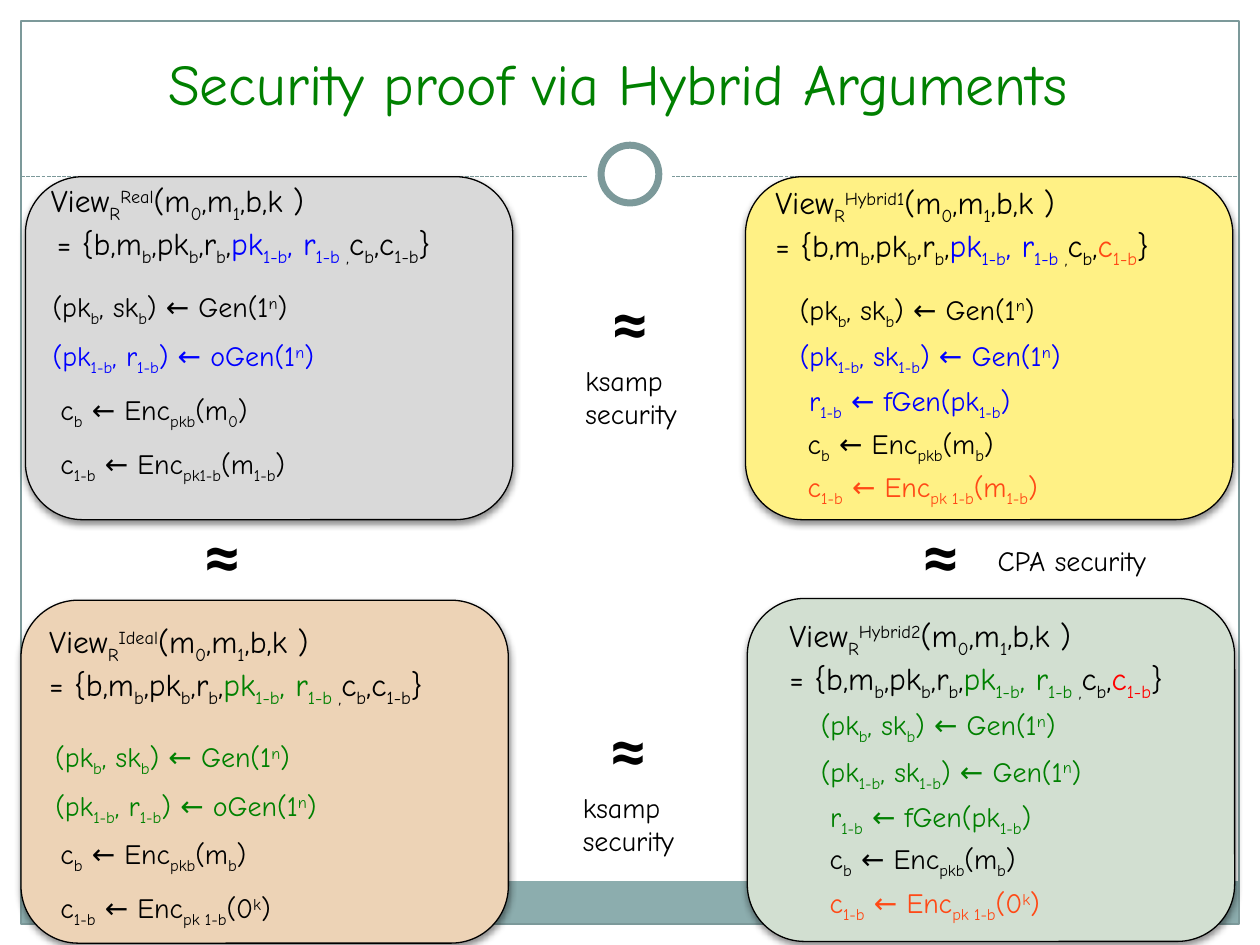
from lxml import etree
from pptx import Presentation
from pptx.dml.color import RGBColor
from pptx.enum.dml import MSO_LINE
from pptx.enum.shapes import MSO_CONNECTOR, MSO_SHAPE
from pptx.enum.text import MSO_ANCHOR, PP_ALIGN
from pptx.oxml import parse_xml
from pptx.oxml.ns import qn
from pptx.util import Pt

RECTANGLE, ROUNDED, OVAL = MSO_SHAPE.RECTANGLE, MSO_SHAPE.ROUNDED_RECTANGLE, MSO_SHAPE.OVAL
BLACK, WHITE, GREEN, BLUE = "000000", "FFFFFF", "008000", "0000FF"
ORANGE, RED, TEAL = "FF4916", "FF0000", "7C999A"
BASELINES = {"_": "-25000", "^": "30000"}
SHADOW = (
    '<a:effectLst xmlns:a="http://schemas.openxmlformats.org/drawingml/2006/main">'
    '<a:outerShdw blurRad="50800" dist="25400" dir="5400000" rotWithShape="0">'
    '<a:srgbClr val="000000"><a:alpha val="45000"/></a:srgbClr>'
    "</a:outerShdw></a:effectLst>"
)

presentation = Presentation()
presentation.slide_width, presentation.slide_height = Pt(720), Pt(540)
slide = presentation.slides.add_slide(presentation.slide_layouts[6])


def add_shape(kind, box, fill=None, line=None, line_width=0.75):
    shape = slide.shapes.add_shape(kind, *map(Pt, box))
    shape.shadow.inherit = False
    if fill:
        shape.fill.solid()
        shape.fill.fore_color.rgb = RGBColor.from_string(fill)
    else:
        shape.fill.background()
    if line:
        shape.line.color.rgb = RGBColor.from_string(line)
        shape.line.width = Pt(line_width)
    else:
        shape.line.fill.background()
    return shape


def add_text(box, lines, size=16, font="Comic Neue", bold=False, wrap=False):
    """Each line is a list of (markup, colour); "|" parts runs, "_" lowers and "^" raises one."""
    text_box = slide.shapes.add_textbox(*map(Pt, box))
    frame = text_box.text_frame
    frame.word_wrap = wrap
    for index, line in enumerate(lines):
        paragraph = frame.paragraphs[0] if index == 0 else frame.add_paragraph()
        paragraph.font.size, paragraph.font.name, paragraph.font.bold = Pt(size), font, bold
        for markup, color in line:
            for piece in markup.split("|"):
                run = paragraph.add_run()
                baseline = BASELINES.get(piece[0])
                run.text = piece[1:] if baseline else piece
                run.font.color.rgb = RGBColor.from_string(color)
                if baseline:
                    run.font._element.set("baseline", baseline)
    return frame


# Frame, footer band, dashed divider and ring
add_shape(RECTANGLE, (11.5, 503.5, 696, 24.5), "8CADAE")
add_shape(RECTANGLE, (12, 12, 696, 516), line=TEAL)
divider = slide.shapes.add_connector(MSO_CONNECTOR.STRAIGHT, Pt(12), Pt(100.8), Pt(708), Pt(100.8))
divider.line.color.rgb = RGBColor.from_string(TEAL)
divider.line.width = Pt(0.75)
divider.line.dash_style = MSO_LINE.SQUARE_DOT
etree.SubElement(divider._element.spPr, qn("a:effectLst"))
add_shape(OVAL, (336, 75.5, 48, 48), WHITE)
add_shape(OVAL, (343.5, 83, 33, 33), WHITE, TEAL, 4)

# Title
title = add_text((14.5, 13, 688, 57.5), [[("Security proof via Hybrid Arguments ", GREEN)]], 33, wrap=True)
title.vertical_anchor = MSO_ANCHOR.BOTTOM
title.paragraphs[0].alignment = PP_ALIGN.CENTER

# Formulas with the widths of their boxes
GEN = ("(pk|_b|, sk|_b|) ← Gen(1|^n|)", 161)
GEN_OTHER = ("(pk|_1-b|, sk|_1-b|) ← Gen(1|^n|)", 180)
OGEN = ("(pk|_1-b|, r|_1-b|) ← oGen(1|^n|)", 179)
FGEN = (" r|_1-b| ← fGen(pk|_1-b|)", 150)
ENC = ("c|_b| ← Enc|_pkb|(m|_b|)", 130)
ENC_ZERO = ("c|_b| ← Enc|_pkb|(m|_0|)", 130)
ENC_REAL = ("c|_1-b| ← Enc|_pk1-b|(m|_1-b|)", 158)
ENC_OTHER = ("c|_1-b| ← Enc|_pk 1-b|(m|_1-b|)", 161)
ENC_NULL = ("c|_1-b| ← Enc|_pk 1-b|(0|^k|)", 152)

# Panels: name, fill, corner, header box, line indent, colour of pk/r, colour of last c, steps
panels = [
    ("Ideal", "EDD3B6", (12, 343), (21, 352, 267), "", GREEN, BLACK,
     [(24.5, 419, GEN, GREEN), (24.5, 447, OGEN, GREEN),
      (27.5, 474.5, ENC, BLACK), (27.5, 505.5, ENC_NULL, BLACK)]),
    ("Hybrid2", "D2DFD1", (427, 342), (444, 348.5, 267), "", GREEN, RED,
     [(462, 401, GEN, GREEN), (462, 427.5, GEN_OTHER, GREEN), (462, 453.5, FGEN, GREEN),
      (467, 477.5, ENC, BLACK), (467, 502.5, ENC_NULL, ORANGE)]),
    ("Hybrid1", "FFF185", (426, 101), (436, 101, 267), "", BLUE, ORANGE,
     [(450, 163.5, GEN, BLACK), (450, 190, GEN_OTHER, BLUE), (450, 215.5, FGEN, BLUE),
      (454.5, 240, ENC, BLACK), (454.5, 265, ENC_OTHER, ORANGE)]),
    ("Real", "D9D9D9", (14.5, 101), (22, 100, 271), "_ |", BLUE, BLACK,
     [(23, 162, GEN, BLACK), (23, 190, OGEN, BLUE),
      (27.5, 221, ENC_ZERO, BLACK), (27.5, 251.5, ENC_REAL, BLACK)]),
]
for name, fill, corner, (left, top, width), indent, key_color, cipher_color, steps in panels:
    panel = add_shape(ROUNDED, (*corner, 278.5, 196), fill, BLACK)
    panel._element.spPr.replace(panel._element.spPr.find(qn("a:effectLst")), parse_xml(SHADOW))
    add_text((left, top, width, 51), [
        [(f"View|_R|^{name}|(m|_0|,m|_1|,b,k )", BLACK)],
        [(indent + "= {b,m|_b|,pk|_b|,r|_b|,", BLACK), ("pk|_1-b|, r|_1-b", key_color),
         ("_ ,|c|_b|,", BLACK), ("c|_1-b", cipher_color), ("}", BLACK)],
    ], 18)
    for step_left, step_top, (markup, step_width), color in steps:
        add_text((step_left, step_top, step_width, 26.5), [[(markup, color)]])

# Indistinguishability signs between the panels
for left, top in [(341, 155), (518.5, 288), (340, 399), (108, 288)]:
    add_text((left, top, 37.5, 55.5), [[("≈", BLACK)]], 40, "Cambria", bold=True)

# Reasons beside the signs
for box, reason in [
    ((327.5, 204, 80, 46), "ksamp security"),
    ((563, 307, 120, 26.5), "CPA security"),
    ((326, 448, 80, 46), "ksamp security"),
]:
    add_text(box, [[(reason, BLACK)]], wrap=True)

presentation.save("out.pptx")
